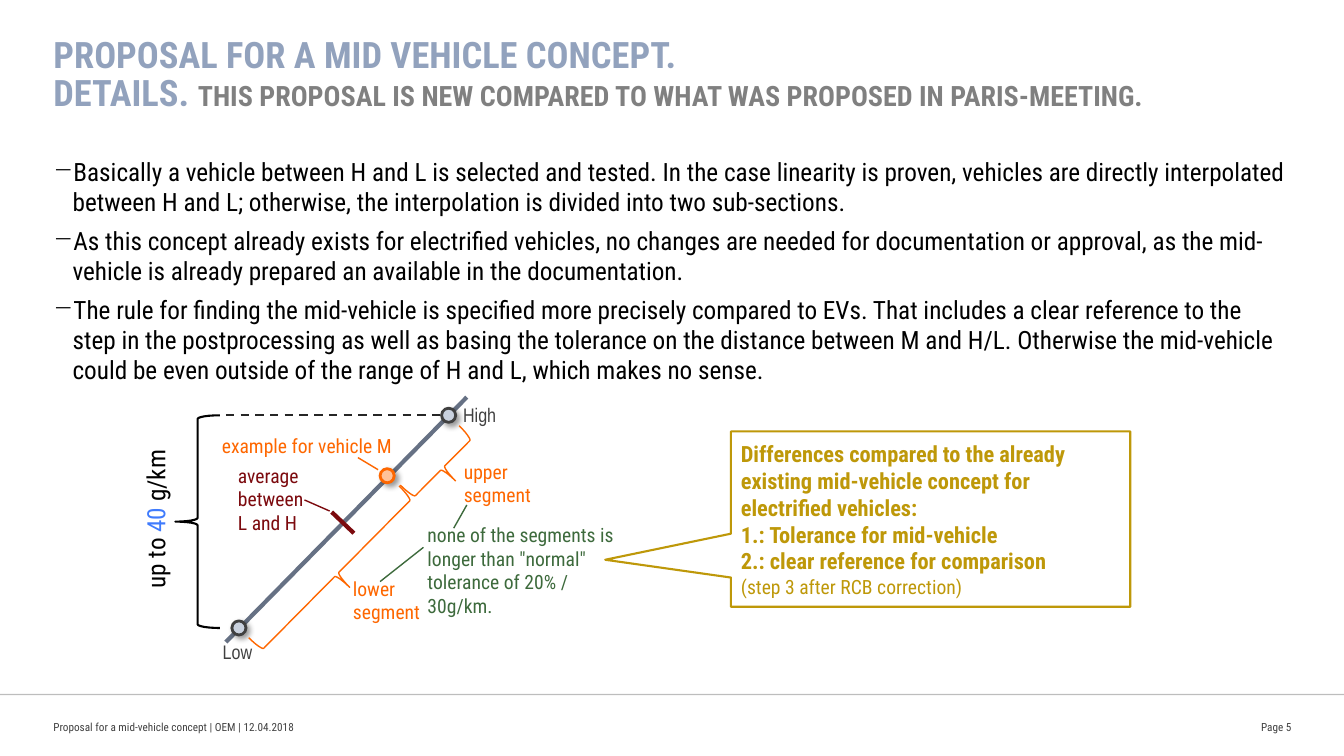
from dataclasses import dataclass
from typing import Optional

from lxml import etree
from pptx import Presentation
from pptx.dml.color import RGBColor
from pptx.enum.dml import MSO_LINE
from pptx.enum.shapes import MSO_CONNECTOR, MSO_SHAPE
from pptx.enum.text import MSO_ANCHOR, PP_ALIGN
from pptx.oxml.ns import qn
from pptx.util import Inches, Pt

LEFT, CENTER, RIGHT = PP_ALIGN.LEFT, PP_ALIGN.CENTER, PP_ALIGN.RIGHT
TOP, MIDDLE = MSO_ANCHOR.TOP, MSO_ANCHOR.MIDDLE
STRAIGHT = MSO_CONNECTOR.STRAIGHT
OVAL, CALLOUT = MSO_SHAPE.OVAL, MSO_SHAPE.RECTANGULAR_CALLOUT
LEFT_BRACE, RIGHT_BRACE = MSO_SHAPE.LEFT_BRACE, MSO_SHAPE.RIGHT_BRACE
DASH = MSO_LINE.DASH

BLACK = RGBColor(0x00, 0x00, 0x00)
WHITE = RGBColor(0xFF, 0xFF, 0xFF)
TITLE_BLUE = RGBColor(0x92, 0xA2, 0xBD)
GRAY = RGBColor(0x80, 0x80, 0x80)
DARK = RGBColor(0x40, 0x40, 0x40)
DASH_GRAY = RGBColor(0x26, 0x26, 0x26)
SLATE = RGBColor(0x66, 0x71, 0x84)
PALE_BLUE = RGBColor(0xC9, 0xD1, 0xDE)
BLUE = RGBColor(0x3F, 0x7B, 0xFD)
GOLD = RGBColor(0xBE, 0x98, 0x09)
RED = RGBColor(0x7C, 0x0A, 0x0E)
ORANGE = RGBColor(0xFE, 0x67, 0x00)
PALE_ORANGE = RGBColor(0xFF, 0xC2, 0x99)
GREEN = RGBColor(0x3D, 0x6A, 0x3C)

ROBOTO, NARROW = "Roboto Condensed", "Arial Narrow"
MARKER_SIZE = 0.14
MARGIN, CONTENT_WIDTH = 0.53, 12.28


@dataclass
class Span:
    text: str
    size: float
    color: RGBColor
    bold: bool = False
    font: str = ROBOTO


@dataclass
class Label:
    left: float
    top: float
    width: float
    height: float
    paras: list[list[Span]]
    align: PP_ALIGN = LEFT
    anchor: MSO_ANCHOR = TOP
    inset: tuple[float, float] = (0, 0)
    rotation: float = 0
    line_spacing: Optional[float] = None
    space_after: float = 0
    bullet: str = ""


@dataclass
class Stroke:
    start: tuple[float, float]
    end: tuple[float, float]
    color: RGBColor
    width: float
    dashed: bool = False
    alpha: int = 100


@dataclass
class Marker:
    left: float
    top: float
    fill: RGBColor
    line: RGBColor


@dataclass
class Brace:
    kind: MSO_SHAPE
    left: float
    top: float
    width: float
    height: float
    color: RGBColor
    line_width: float
    rotation: float = 0


def write_text(frame, paras: list[list[Span]], align: PP_ALIGN = LEFT) -> None:
    frame.word_wrap = True
    for index, spans in enumerate(paras):
        para = frame.paragraphs[0] if index == 0 else frame.add_paragraph()
        para.alignment = align
        for span in spans:
            for number, line in enumerate(span.text.split("\n")):
                if number:
                    para.add_line_break()
                if line:
                    run = para.add_run()
                    run.text = line
                    run.font.name = span.font
                    run.font.size = Pt(span.size)
                    run.font.bold = span.bold
                    run.font.color.rgb = span.color


def draw_label(page, label: Label) -> None:
    box = page.shapes.add_textbox(Inches(label.left), Inches(label.top), Inches(label.width), Inches(label.height))
    box.rotation = label.rotation
    frame = box.text_frame
    frame.vertical_anchor = label.anchor
    frame.margin_left = frame.margin_right = Inches(label.inset[0])
    frame.margin_top = frame.margin_bottom = Inches(label.inset[1])
    write_text(frame, label.paras, label.align)
    for para in frame.paragraphs:
        para.space_after = Pt(label.space_after)
        if label.line_spacing:
            para.line_spacing = Pt(label.line_spacing)
        if label.bullet:
            props = para._p.get_or_add_pPr()
            props.set("marL", str(Inches(0.19)))
            props.set("indent", str(-Inches(0.19)))
            etree.SubElement(props, qn("a:buChar"), char=label.bullet)


def draw_stroke(page, stroke: Stroke) -> None:
    points = [Inches(value) for value in (*stroke.start, *stroke.end)]
    line = page.shapes.add_connector(STRAIGHT, *points)
    line.line.color.rgb = stroke.color
    line.line.width = Pt(stroke.width)
    if stroke.dashed:
        line.line.dash_style = DASH
    if stroke.alpha < 100:
        color = line._element.spPr.find(".//" + qn("a:srgbClr"))
        etree.SubElement(color, qn("a:alpha"), val=str(stroke.alpha * 1000))
    etree.SubElement(line._element.spPr, qn("a:effectLst"))


def draw_marker(page, marker: Marker) -> None:
    dot = page.shapes.add_shape(OVAL, Inches(marker.left), Inches(marker.top), Inches(MARKER_SIZE), Inches(MARKER_SIZE))
    dot.fill.solid()
    dot.fill.fore_color.rgb = marker.fill
    dot.line.color.rgb = marker.line
    dot.line.width = Pt(2)
    dot.shadow.inherit = False
    effects = dot._element.spPr.find(qn("a:effectLst"))
    shadow = etree.SubElement(effects, qn("a:outerShdw"), blurRad=str(Pt(4)), dist=str(Pt(3)), dir=str(45 * 60000))
    color = etree.SubElement(shadow, qn("a:srgbClr"), val=str(BLACK))
    etree.SubElement(color, qn("a:alpha"), val="40000")


def draw_brace(page, brace: Brace) -> None:
    shape = page.shapes.add_shape(brace.kind, Inches(brace.left), Inches(brace.top), Inches(brace.width), Inches(brace.height))
    shape.rotation = brace.rotation
    shape.fill.background()
    shape.line.color.rgb = brace.color
    shape.line.width = Pt(brace.line_width)
    shape.shadow.inherit = False


def draw_callout(page, paras: list[list[Span]]) -> None:
    box = page.shapes.add_shape(CALLOUT, Inches(7.25), Inches(4.28), Inches(3.96), Inches(1.74))
    box.adjustments[0], box.adjustments[1] = -0.815, 0.232
    box.fill.solid()
    box.fill.fore_color.rgb = WHITE
    box.line.color.rgb = GOLD
    box.line.width = Pt(1.5)
    box.shadow.inherit = False
    box.text_frame.vertical_anchor = MIDDLE
    write_text(box.text_frame, paras)


def note(left: float, top: float, width: float, height: float, text: str, color: RGBColor) -> Label:
    return Label(left, top, width, height, [[Span(text, 14, color)]], space_after=6)


BULLETS = [
    "Basically a vehicle between H and L is selected and tested. In the case linearity is proven, vehicles are directly interpolated between H and L; otherwise, the interpolation is divided into two sub-sections.",
    "As this concept already exists for electrified vehicles, no changes are needed for documentation or approval, as the mid-vehicle is already prepared an available in the documentation.",
    "The rule for finding the mid-vehicle is specified more precisely compared to EVs. That includes a clear reference to the step in the postprocessing as well as basing the tolerance on the distance between M and H/L. Otherwise the mid-vehicle could be even outside of the range of H and L, which makes no sense.",
]
DIFFERENCES = [
    [Span("Differences compared to the already existing mid-vehicle concept for electrified vehicles:", 16, GOLD, True)],
    [Span("1.: Tolerance for mid-vehicle", 16, GOLD, True)],
    [Span("2.: clear reference for comparison\n", 16, GOLD, True), Span("(step 3 after RCB correction)", 14, GOLD)],
]
LABELS = [
    Label(MARGIN, 0.38, CONTENT_WIDTH, 0.77, [[
        Span("PROPOSAL FOR A MID VEHICLE CONCEPT.\nDETAILS. ", 26, TITLE_BLUE, True),
        Span("THIS PROPOSAL IS NEW COMPARED TO WHAT WAS PROPOSED IN PARIS-MEETING.", 20, GRAY, True),
    ]], line_spacing=27),
    Label(MARGIN, 1.55, CONTENT_WIDTH, 2.2, [[Span(text, 18, BLACK)] for text in BULLETS], space_after=6, bullet="−"),
    Label(MARGIN, 7.03, 10.77, 0.36, [[Span("Proposal for a mid-vehicle concept | OEM | 12.04.2018", 8, DARK)]], anchor=MIDDLE),
    Label(11.58, 7.03, 1.23, 0.36, [[Span("Page 5", 8, DARK)]], RIGHT, MIDDLE),
    Label(4.38, 3.95, 0.64, 0.34, [[Span("High", 14, DARK, font=NARROW)]], RIGHT, inset=(0.1, 0.05)),
    Label(2.11, 6.3, 0.54, 0.34, [[Span("Low", 14, DARK, font=NARROW)]], inset=(0.1, 0.05)),
    Label(0.79, 4.98, 1.54, 0.34, [[Span("up to ", 18, BLACK), Span("40", 18, BLUE), Span(" g/km", 18, BLACK)]],
          CENTER, rotation=270, space_after=6),
    note(2.2, 4.31, 1.71, 0.26, "example for vehicle M", ORANGE),
    note(2.36, 4.6, 0.81, 0.78, "average\nbetween\nL and H", RED),
    note(3.5, 5.72, 0.81, 0.51, "lower segment", ORANGE),
    note(4.6, 4.56, 0.81, 0.51, "upper segment", ORANGE),
    note(4.24, 5.19, 2.06, 0.77, 'none of the segments is longer than "normal" tolerance of 20% / 30g/km.', GREEN),
]
STROKES = [
    Stroke((0, 6.89), (13.33, 6.89), BLACK, 1, alpha=25),
    Stroke((2.24, 6.37), (4.63, 3.94), SLATE, 3),
    Stroke((2.24, 4.12), (4.38, 4.12), DASH_GRAY, 1.5, dashed=True),
    Stroke((3.29, 5.08), (3.51, 5.29), RED, 3),
    Stroke((4.5, 5.24), (4.63, 5.01), GREEN, 1),
    Stroke((3.77, 5.77), (4.2, 5.43), GREEN, 1),
    Stroke((3.55, 4.54), (3.75, 4.66), ORANGE, 1),
    Stroke((3.02, 4.96), (3.27, 5.07), RED, 1),
]
MARKERS = [
    Marker(4.38, 4.05, PALE_BLUE, DARK),
    Marker(2.3, 6.16, PALE_BLUE, DARK),
    Marker(3.77, 4.65, PALE_ORANGE, ORANGE),
]
BRACES = [
    Brace(LEFT_BRACE, 1.74, 4.12, 0.44, 2.11, BLACK, 1.5),
    Brace(RIGHT_BRACE, 3.16, 4.64, 0.36, 2.12, ORANGE, 1, 44.7),
    Brace(RIGHT_BRACE, 4.21, 4.23, 0.36, 0.83, ORANGE, 1, 44.7),
]


def main() -> None:
    deck = Presentation()
    deck.slide_width, deck.slide_height = Inches(13.33), Inches(7.5)
    page = deck.slides.add_slide(deck.slide_layouts[6])
    for stroke in STROKES:
        draw_stroke(page, stroke)
    for marker in MARKERS:
        draw_marker(page, marker)
    for brace in BRACES:
        draw_brace(page, brace)
    draw_callout(page, DIFFERENCES)
    for label in LABELS:
        draw_label(page, label)
    deck.save("out.pptx")


if __name__ == "__main__":
    main()
